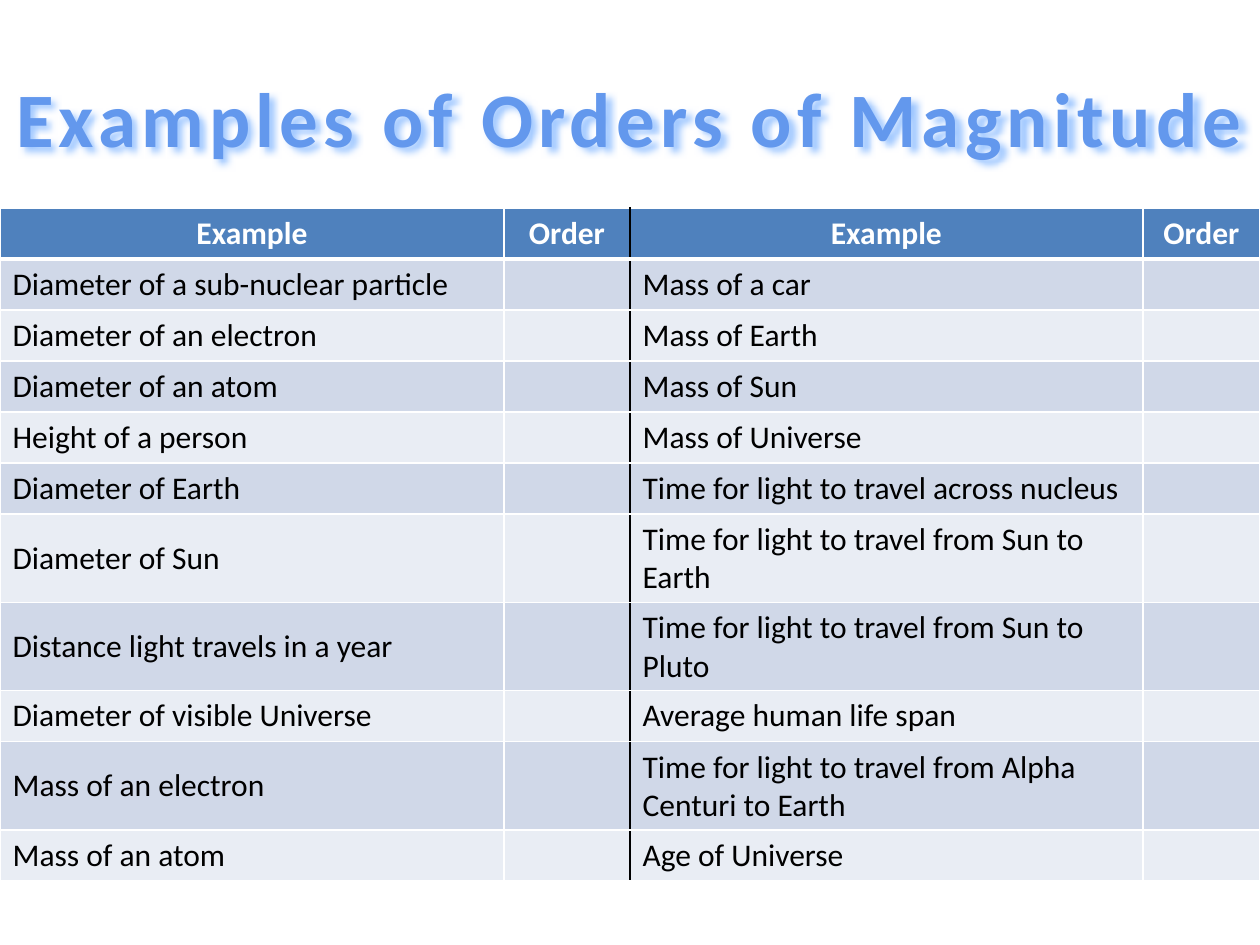
from typing import NamedTuple

from lxml import etree
from pptx import Presentation, util as u
from pptx.dml.color import RGBColor
from pptx.enum import text
from pptx.oxml import ns, parse_xml

FONT = "Calibri"
WHITE, BLACK = "FFFFFF", "000000"
HEADER_FILL, BAND_FILLS = "4F81BD", ("D0D8E8", "E9EDF4")
TITLE_COLOUR, TITLE_SHADOW = "6398ED", "A0C8FF"
COLUMN_WIDTHS = (4, 1, 4.07, 0.93)
TABLE_TOP, ROWS_HEIGHT = 1.65, 4.46


class Row(NamedTuple):
    left: str
    right: str
    left_order: str = ""
    right_order: str = ""


ROWS = [
    Row("Example", "Example", "Order", "Order"),
    Row("Diameter of a sub-nuclear particle", "Mass of a car"),
    Row("Diameter of an electron", "Mass of Earth"),
    Row("Diameter of an atom", "Mass of Sun"),
    Row("Height of a person", "Mass of Universe"),
    Row("Diameter of Earth", "Time for light to travel across nucleus"),
    Row("Diameter of Sun", "Time for light to travel from Sun to Earth"),
    Row("Distance light travels in a year", "Time for light to travel from Sun to Pluto"),
    Row("Diameter of visible Universe", "Average human life span"),
    Row("Mass of an electron", "Time for light to travel from Alpha Centuri to Earth"),
    Row("Mass of an atom", "Age of Universe"),
]


def colour(value: str) -> RGBColor:
    return RGBColor.from_string(value)


def write(paragraph, words: str, alignment, font_colour: str, **font_format):
    paragraph.alignment = alignment
    run = paragraph.add_run()
    run.text = words
    run.font.color.rgb = colour(font_colour)
    for name, value in {"name": FONT, **font_format}.items():
        setattr(run.font, name, value)
    return run


def add_shadow(shape) -> None:
    shape._element.spPr.append(parse_xml(
        f'<a:effectLst {ns.nsdecls("a")}>'
        f'<a:outerShdw blurRad="{u.Pt(4)}" dist="{u.Pt(3)}" dir="2700000" algn="tl" rotWithShape="0">'
        f'<a:srgbClr val="{TITLE_SHADOW}"/></a:outerShdw></a:effectLst>'))


def add_title(slide) -> None:
    title = slide.shapes.add_textbox(u.Inches(0), u.Inches(0.3), u.Inches(10), u.Inches(1.25))
    frame = title.text_frame
    frame.word_wrap = False
    frame.vertical_anchor = text.MSO_ANCHOR.MIDDLE
    run = write(frame.paragraphs[0], "Examples of Orders of Magnitude", text.PP_ALIGN.CENTER,
                TITLE_COLOUR, size=u.Pt(44), bold=True)
    run.font._element.set("spc", "300")
    add_shadow(title)


def set_borders(cell, borders: dict[str, tuple[str, float]]) -> None:
    """Put the border lines ahead of the fill, in the order the schema asks for."""
    properties = cell._tc.get_or_add_tcPr()
    for index, (side, (line_colour, width)) in enumerate(borders.items()):
        line = etree.Element(ns.qn(f"a:ln{side}"), w=str(u.Pt(width)))
        fill = etree.SubElement(line, ns.qn("a:solidFill"))
        etree.SubElement(fill, ns.qn("a:srgbClr"), val=line_colour)
        properties.insert(index, line)


def format_cell(cell, words: str, row: int, column: int) -> None:
    header = row == 0
    cell.fill.solid()
    cell.fill.fore_color.rgb = colour(HEADER_FILL if header else BAND_FILLS[(row - 1) % 2])
    set_borders(cell, {
        "L": (BLACK if column == 2 else WHITE, 1),
        "R": (BLACK if column == 1 else WHITE, 1),
        "T": (WHITE, 3 if row == 1 else 1),
        "B": (WHITE, 3 if header else 1),
    })
    if column == 0 and not header:
        cell.vertical_anchor = text.MSO_ANCHOR.MIDDLE
    if words:
        write(cell.text_frame.paragraphs[0], words,
              text.PP_ALIGN.CENTER if header else text.PP_ALIGN.LEFT,
              WHITE if header else BLACK, size=u.Pt(18), bold=header)


def add_examples_table(slide) -> None:
    table = slide.shapes.add_table(
        len(ROWS), len(COLUMN_WIDTHS), u.Inches(0), u.Inches(TABLE_TOP),
        u.Inches(sum(COLUMN_WIDTHS)), u.Inches(ROWS_HEIGHT)).table
    for column, width in zip(table.columns, COLUMN_WIDTHS):
        column.width = u.Inches(width)
    for row, entry in enumerate(ROWS):
        cells = (entry.left, entry.left_order, entry.right, entry.right_order)
        for column, words in enumerate(cells):
            format_cell(table.cell(row, column), words, row, column)


def main() -> None:
    presentation = Presentation()
    presentation.slide_width, presentation.slide_height = u.Inches(10), u.Inches(7.5)
    slide = presentation.slides.add_slide(presentation.slide_layouts[6])
    add_title(slide)
    add_examples_table(slide)
    presentation.save("out.pptx")


if __name__ == "__main__":
    main()
